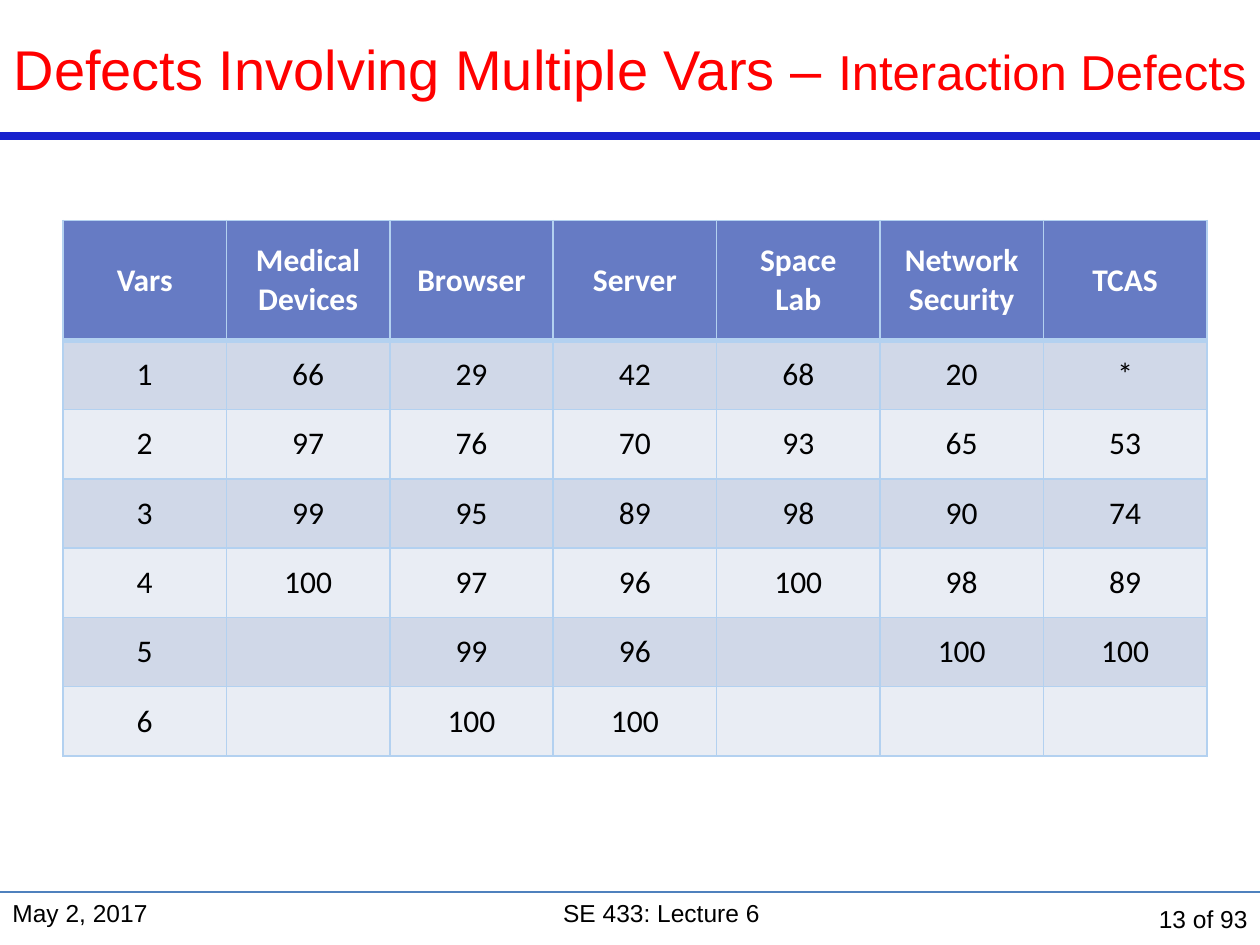
from lxml.etree import SubElement
from pptx import Presentation
from pptx.dml.color import RGBColor
from pptx.enum.shapes import MSO_CONNECTOR
from pptx.enum.text import MSO_ANCHOR as Anchor, PP_ALIGN as Align
from pptx.oxml.ns import qn
from pptx.util import Inches, Pt

COLORS = {
    "title": "FF0000", "text": "000000", "head_text": "FFFFFF",
    "title_rule": "1822CD", "foot_rule": "4F81BD", "border": "B3D1F0",
    "head": "667BC4", "odd": "D0D8E8", "even": "E9EDF4",
}
TITLE = [("Defects Involving Multiple Vars – ", 32), ("Interaction Defects", 28)]
HEADER = ["Vars", "Medical\nDevices", "Browser", "Server", "Space\nLab",
          "Network\nSecurity", "TCAS"]
ROWS = [
    [1, 66, 29, 42, 68, 20, "*"],
    [2, 97, 76, 70, 93, 65, 53],
    [3, 99, 95, 89, 98, 90, 74],
    [4, 100, 97, 96, 100, 98, 89],
    [5, "", 99, 96, "", 100, 100],
    [6, "", 100, 100, "", "", ""],
]
# text, share of the slide width, alignment, anchor
FOOTER = [
    ("May 2, 2017", 13 / 60, Align.LEFT, Anchor.TOP),
    ("SE 433: Lecture 6", 37 / 60, Align.CENTER, Anchor.TOP),
    ("13 of 93", 10 / 60, Align.RIGHT, Anchor.MIDDLE),
]
WIDTH, HEIGHT = 10, 7.5
TITLE_H, FOOT_Y = 1.08, 7.08
TABLE_X, TABLE_Y, TABLE_W = 0.5, 1.75, 9.08
HEAD_H, ROW_H = 0.95, 0.55


def rgb(name):
    return RGBColor.from_string(COLORS[name])


def style(font, **formats):
    font.color.rgb = rgb(formats.pop("color"))
    for key, value in formats.items():
        setattr(font, key, value)


def add_rule(s, y, color, weight):
    line = s.shapes.add_connector(MSO_CONNECTOR.STRAIGHT, 0, Inches(y),
                                  Inches(WIDTH), Inches(y))
    line.line.color.rgb = rgb(color)
    line.line.width = Pt(weight)
    SubElement(line._element.spPr, qn("a:effectLst"))


def add_text(s, box, runs, color, align, anchor, margin=0.1):
    tf = s.shapes.add_textbox(*map(Inches, box)).text_frame
    formats = {"word_wrap": True, "vertical_anchor": anchor,
               "margin_left": Inches(margin), "margin_right": Inches(margin)}
    for key, value in formats.items():
        setattr(tf, key, value)
    p = tf.paragraphs[0]
    p.alignment = align
    for text, size in runs:
        r = p.add_run()
        r.text = text
        style(r.font, name="Arial", size=Pt(size), color=color)


def set_borders(cell, weights):
    """Draw the cell's edges; the lines must precede the fill in tcPr."""
    tc_pr = cell._tc.get_or_add_tcPr()
    for i, (side, weight) in enumerate(weights.items()):
        ln = SubElement(tc_pr, qn(f"a:ln{side}"), w=str(Pt(weight)))
        fill = SubElement(ln, qn("a:solidFill"))
        SubElement(fill, qn("a:srgbClr"), val=COLORS["border"])
        tc_pr.insert(i, ln)


def add_table(s):
    data = [HEADER] + ROWS
    heights = [HEAD_H] + [ROW_H] * len(ROWS)
    box = TABLE_X, TABLE_Y, TABLE_W, sum(heights)
    table = s.shapes.add_table(len(data), len(HEADER), *map(Inches, box)).table
    for column in table.columns:
        column.width = Inches(TABLE_W / len(HEADER))
    for i, values in enumerate(data):
        table.rows[i].height = Inches(heights[i])
        head = i == 0
        fill = "head" if head else "odd" if i % 2 else "even"
        weights = {"L": 1, "R": 1, "T": 3 if i == 1 else 1, "B": 3 if head else 1}
        for j, value in enumerate(values):
            cell = table.cell(i, j)
            cell.fill.solid()
            cell.fill.fore_color.rgb = rgb(fill)
            cell.vertical_anchor = Anchor.MIDDLE
            set_borders(cell, weights)
            p = cell.text_frame.paragraphs[0]
            p.text = str(value)
            p.alignment = Align.CENTER
            for r in p.runs:
                style(r.font, name="Calibri", size=Pt(18), bold=head,
                      color="head_text" if head else "text")


def main():
    prs = Presentation()
    prs.slide_width, prs.slide_height = Inches(WIDTH), Inches(HEIGHT)
    s = prs.slides.add_slide(prs.slide_layouts[6])
    add_rule(s, TITLE_H, "title_rule", 4.5)
    add_rule(s, FOOT_Y, "foot_rule", 0.75)
    add_text(s, (0, 0, WIDTH, TITLE_H), TITLE, "title",
             Align.CENTER, Anchor.MIDDLE, margin=0)
    add_table(s)
    x = 0
    for text, share, align, anchor in FOOTER:
        box = x, FOOT_Y, share * WIDTH, HEIGHT - FOOT_Y
        add_text(s, box, [(text, 14)], "text", align, anchor)
        x += share * WIDTH
    prs.save("out.pptx")


if __name__ == "__main__":
    main()
